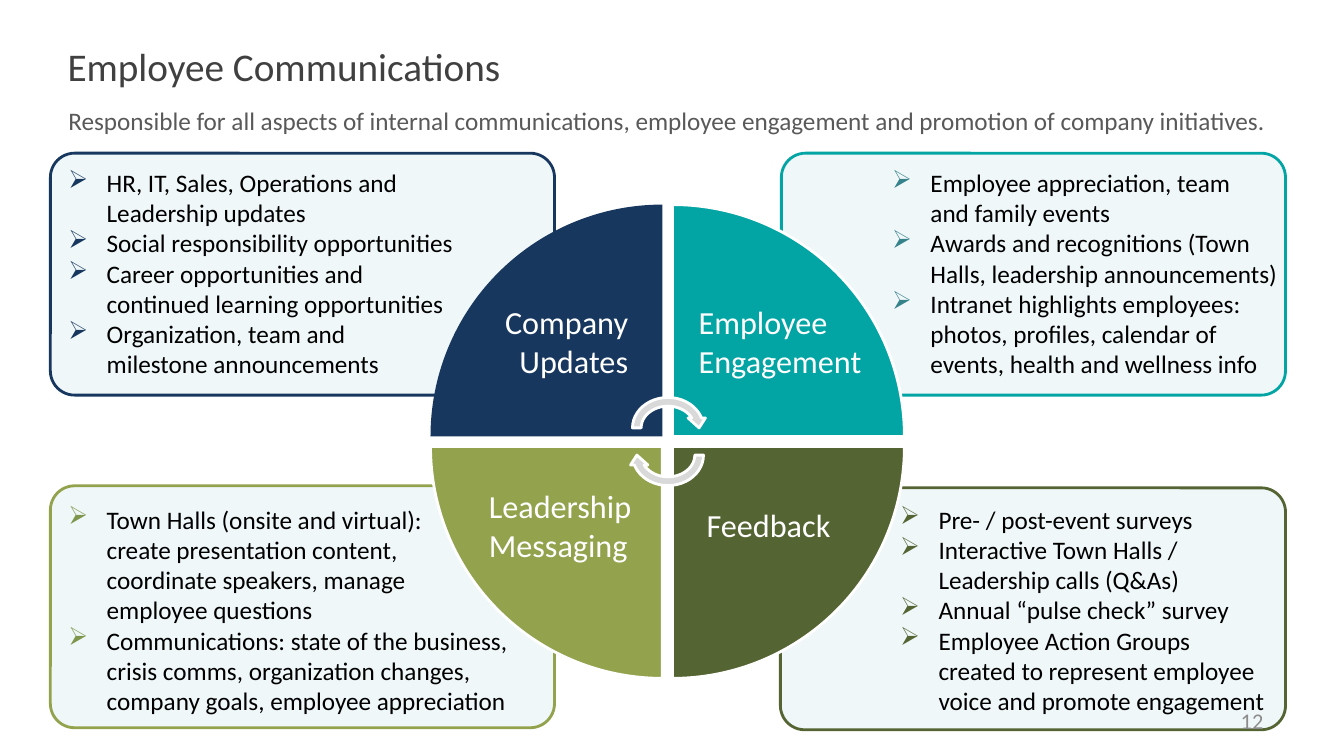
from dataclasses import dataclass

import pptx
import pptx.dml.color
import pptx.enum.shapes
import pptx.enum.text
import pptx.oxml
import pptx.oxml.ns
import pptx.util
from lxml import etree

SHAPE = pptx.enum.shapes.MSO_SHAPE
ALIGN = pptx.enum.text.PP_ALIGN
ANCHOR = pptx.enum.text.MSO_ANCHOR
EMU_PER_PX = 9144  # 100 px to the inch
FONT = "Calibri"
COLOURS = {
    "navy": "17375E", "teal": "03A4A4", "olive": "93A34D", "forest": "546432",
    "teal bullet": "35828B", "olive bullet": "7D964B", "panel": "EEF7F8",
    "arrow": "D9D9D9", "white": "FFFFFF", "black": "000000",
    "title": "404040", "subtitle": "595959", "number": "8C8C8C",
}


@dataclass(frozen=True)
class Area:
    left: int
    top: int
    width: int
    height: int

    def emu(self) -> list[int]:
        return [n * EMU_PER_PX for n in (self.left, self.top, self.width, self.height)]


@dataclass(frozen=True)
class Label:
    area: Area
    text: str
    size: int
    colour: str
    align: int = ALIGN.LEFT
    anchor: int = ANCHOR.TOP
    insets: tuple[int, int] = (10, 5)


@dataclass(frozen=True)
class Topic:
    colour: str
    bullet_colour: str
    panel: Area
    wedge: Area
    turn: int
    outlined: bool
    heading: Label
    notes: Area
    items: tuple[str, ...]


def heading(area: Area, text: str, align: int = ALIGN.LEFT) -> Label:
    return Label(area, text, 23, "white", align)


WEDGE = 230
LEFT, RIGHT, UPPER, LOWER = 427, 667, 203, 443

TOPICS = [
    Topic("forest", "forest", Area(774, 484, 501, 240), Area(RIGHT, LOWER, WEDGE, WEDGE), 180, True,
          heading(Area(691, 496, 150, 49), "Feedback"), Area(883, 495, 392, 222),
          ("Pre- / post-event surveys",
           "Interactive Town Halls / Leadership calls (Q&As)",
           "Annual “pulse check” survey",
           "Employee Action Groups\ncreated to represent employee voice and promote engagement")),
    Topic("olive", "olive bullet", Area(50, 482, 500, 240), Area(LEFT, LOWER, WEDGE, WEDGE), 270, True,
          heading(Area(475, 478, 167, 88), "Leadership Messaging"), Area(58, 495, 467, 222),
          ("Town Halls (onsite and virtual):\ncreate presentation content,\n"
           "coordinate speakers, manage\nemployee questions",
           "Communications: state of the business, crisis comms, organization changes, "
           "company goals, employee appreciation")),
    Topic("teal", "teal bullet", Area(775, 152, 500, 240), Area(RIGHT, UPPER, WEDGE, WEDGE), 90, True,
          heading(Area(683, 295, 208, 88), "Employee Engagement"), Area(875, 161, 408, 222),
          ("Employee appreciation, team\nand family events",
           "Awards and recognitions (Town Halls, leadership announcements)",
           "Intranet highlights employees: photos, profiles, calendar of\n"
           "events, health and wellness info")),
    Topic("navy", "navy", Area(50, 152, 500, 240), Area(LEFT, UPPER, WEDGE, WEDGE), 0, False,
          heading(Area(475, 295, 158, 88), "Company Updates", ALIGN.RIGHT), Area(58, 161, 417, 222),
          ("HR, IT, Sales, Operations and Leadership updates",
           "Social responsibility opportunities",
           "Career opportunities and continued learning opportunities",
           "Organization, team and\nmilestone announcements")),
]

TITLE = Label(Area(67, 30, 1200, 70), "Employee Communications", 28, "title",
              anchor=ANCHOR.MIDDLE, insets=(0, 7))
SUBTITLE = Label(Area(58, 100, 1217, 40),
                 "Responsible for all aspects of internal communications, employee engagement "
                 "and promotion of company initiatives.", 18, "subtitle")
PAGE_NUMBER = Label(Area(955, 695, 311, 40), "12", 16, "number", ALIGN.RIGHT, ANCHOR.MIDDLE, (13, 7))
ARROWS = [(Area(623, 390, 79, 69), 0), (Area(623, 417, 79, 69), 180)]


def rgb(name: str) -> pptx.dml.color.RGBColor:
    return pptx.dml.color.RGBColor.from_string(COLOURS[name])


def add_shape(page, kind, area: Area, fill: str, line: str | None, turn: int = 0):
    shape = page.shapes.add_shape(kind, *area.emu())
    shape.shadow.inherit = False
    shape.rotation = turn
    shape.fill.solid()
    shape.fill.fore_color.rgb = rgb(fill)
    if line:
        shape.line.color.rgb = rgb(line)
        shape.line.width = pptx.util.Pt(2)
    else:
        shape.line.fill.background()
    return shape


def add_text(para, text: str, size: int, colour: str) -> None:
    for index, part in enumerate(text.split("\n")):
        if index:
            para.add_line_break()
        span = para.add_run()
        span.text = part
        span.font.name = FONT
        span.font.size = pptx.util.Pt(size)
        span.font.color.rgb = rgb(colour)


def add_frame(page, area: Area):
    frame = page.shapes.add_textbox(*area.emu()).text_frame
    frame.word_wrap = True
    return frame


def add_label(page, label: Label) -> None:
    frame = add_frame(page, label.area)
    frame.vertical_anchor = label.anchor
    across, down = (inset * EMU_PER_PX for inset in label.insets)
    frame.margin_left = frame.margin_right = across
    frame.margin_top = frame.margin_bottom = down
    para = frame.paragraphs[0]
    para.alignment = label.align
    add_text(para, label.text, label.size, label.colour)


def add_bullet(para, colour: str) -> None:
    properties = para._p.get_or_add_pPr()
    indent = 38 * EMU_PER_PX
    properties.set("marL", str(indent))
    properties.set("indent", str(-indent))
    tag = pptx.oxml.ns.qn
    bullet_colour = etree.SubElement(properties, tag("a:buClr"))
    etree.SubElement(bullet_colour, tag("a:srgbClr"), val=COLOURS[colour])
    etree.SubElement(properties, tag("a:buChar"), char="➢")


def add_panel(page, topic: Topic) -> None:
    panel = add_shape(page, SHAPE.ROUNDED_RECTANGLE, topic.panel, "panel", topic.colour)
    panel.adjustments[0] = 0.1
    tag = pptx.oxml.ns.qn
    fill_colour = panel._element.spPr.find(tag("a:solidFill")).find(tag("a:srgbClr"))
    etree.SubElement(fill_colour, tag("a:alpha"), val="90000")


def add_notes(page, topic: Topic) -> None:
    frame = add_frame(page, topic.notes)
    for index, item in enumerate(topic.items):
        para = frame.add_paragraph() if index else frame.paragraphs[0]
        add_bullet(para, topic.bullet_colour)
        add_text(para, item, 18, "black")


def main() -> None:
    deck = pptx.Presentation()
    deck.slide_width, deck.slide_height = 1333 * EMU_PER_PX, 750 * EMU_PER_PX
    page = deck.slides.add_slide(deck.slide_layouts[6])

    # Title lines
    add_label(page, TITLE)
    add_label(page, SUBTITLE)

    # Panels behind the wheel
    for topic in TOPICS:
        add_panel(page, topic)

    # Wheel and its turning arrows
    for topic in TOPICS:
        outline = "white" if topic.outlined else None
        add_shape(page, SHAPE.PIE_WEDGE, topic.wedge, topic.colour, outline, topic.turn)
    for area, turn in ARROWS:
        add_shape(page, SHAPE.CIRCULAR_ARROW, area, "arrow", "white", turn)

    # Wheel headings and panel text
    for topic in TOPICS:
        add_label(page, topic.heading)
        add_notes(page, topic)

    add_label(page, PAGE_NUMBER)
    deck.save("out.pptx")


if __name__ == "__main__":
    main()
